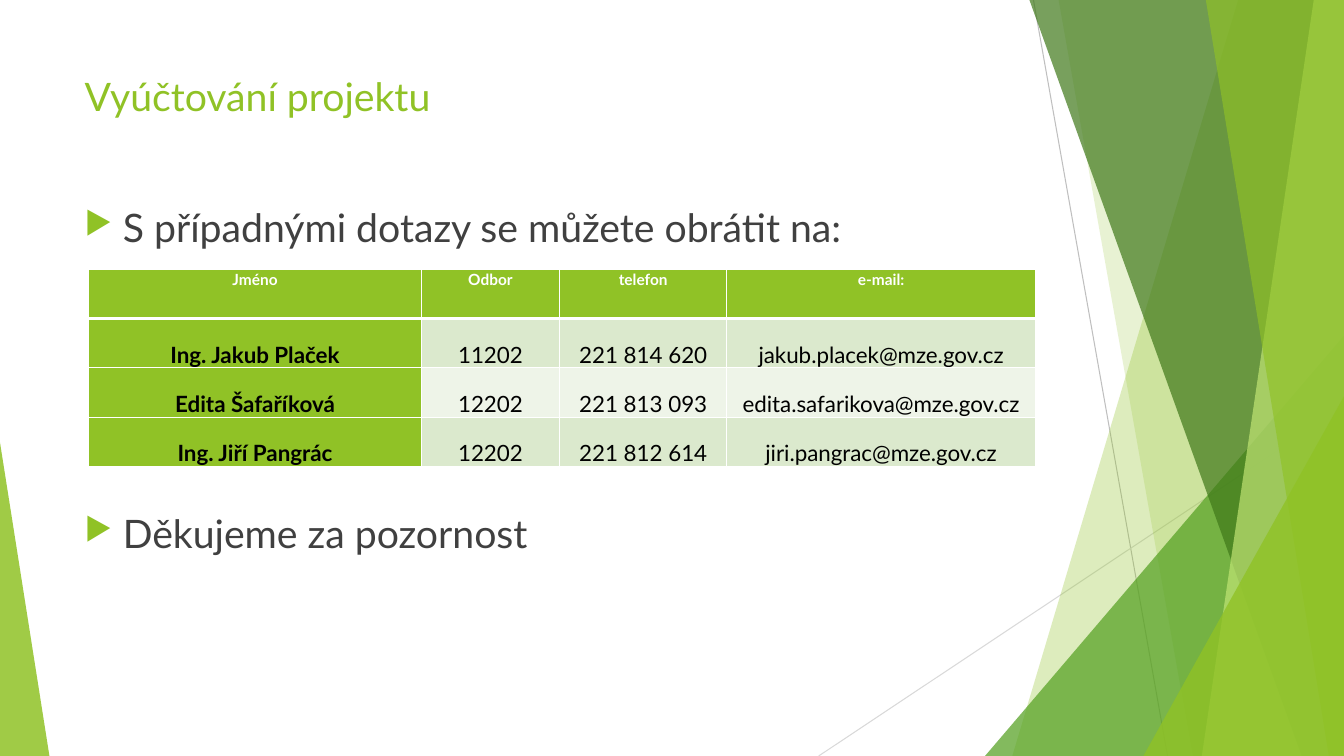
from lxml import etree
from pptx import Presentation
from pptx.dml.color import RGBColor
from pptx.enum.shapes import MSO_CONNECTOR, MSO_SHAPE
from pptx.enum.text import MSO_ANCHOR, PP_ALIGN
from pptx.oxml import parse_xml
from pptx.oxml.ns import nsdecls, qn
from pptx.util import Inches, Pt

STRAIGHT = MSO_CONNECTOR.STRAIGHT
TRIANGLE = MSO_SHAPE.ISOSCELES_TRIANGLE
TOP, BOTTOM = MSO_ANCHOR.TOP, MSO_ANCHOR.BOTTOM
CENTER = PP_ALIGN.CENTER

WIDTH, HEIGHT = 13.33, 7.5
MARGIN, CONTENT_WIDTH = 0.74, 9.4
FONT = "Lato"
GREEN, GRAY, WHITE, BLACK = "90C226", "404040", "FFFFFF", "000000"
BANDS = ("DBE9CD", "EEF4E8")

# Facets leaning on the right edge: distances from that edge at top and bottom
FACETS_BACK = [(1.05, 3.29, GREEN, 30), (2.83, 1.5, GREEN, 20)]
FACETS_FRONT = [(3.12, 0.42, "3F7819", 70), (0.3, 1.41, "C0E474", 70),
                (1.37, 0.15, GREEN, 65)]

CONTACTS = [
    ("Jméno", "Odbor", "telefon", "e-mail:"),
    ("Ing. Jakub Plaček", "11202", "221 814 620", "jakub.placek@mze.gov.cz"),
    ("Edita Šafaříková", "12202", "221 813 093", "edita.safarikova@mze.gov.cz"),
    ("Ing. Jiří Pangrác", "12202", "221 812 614", "jiri.pangrac@mze.gov.cz"),
]
COLUMN_WIDTHS = (3.3, 1.37, 1.66, 3.06)
ROW_HEIGHT = 0.49


def paint(color_format, color):
    color_format.rgb = RGBColor.from_string(color)


def fill_shape(shape, color, opacity):
    shape.shadow.inherit = False
    shape.fill.solid()
    paint(shape.fill.fore_color, color)
    shape.line.fill.background()
    srgb = shape.fill._xPr.find(".//" + qn("a:srgbClr"))
    etree.SubElement(srgb, qn("a:alpha")).set("val", str(opacity * 1000))


def add_hairline(slide, start, end, color):
    hairline = slide.shapes.add_connector(
        STRAIGHT, *(Inches(v) for v in (*start, *end)))
    paint(hairline.line.color, color)
    hairline.line.width = Pt(0.75)
    etree.SubElement(hairline._element.spPr, qn("a:effectLst"))


def add_facet(slide, right, bottom, top_reach, bottom_reach, color, opacity):
    corners = [(right - top_reach, 0), (right, 0), (right, bottom),
               (right - bottom_reach, bottom)]
    first, *rest = [(Inches(x), Inches(y)) for x, y in corners]
    builder = slide.shapes.build_freeform(*first, scale=1.0)
    builder.add_line_segments(rest, close=True)
    fill_shape(builder.convert_to_shape(), color, opacity)


def add_wedge(slide, left, bottom, width, height, apex, color, opacity):
    """Triangle on the bottom edge; apex is 0 at its left side, 1 at its right."""
    wedge = slide.shapes.add_shape(
        TRIANGLE, *(Inches(v) for v in (left, bottom - height, width, height)))
    wedge.adjustments[0] = apex
    fill_shape(wedge, color, opacity)


def add_backdrop(slide, width, height):
    add_hairline(slide, (width - 3.08, 0), (width - 1.75, height), "BFBFBF")
    add_hairline(slide, (width, 4.03), (width - 5.21, height), "D9D9D9")
    for facet in FACETS_BACK:
        add_facet(slide, width, height, *facet)
    add_wedge(slide, width - 3.56, height, 3.56, 4.17, 1, "54A021", 72)
    for facet in FACETS_FRONT:
        add_facet(slide, width, height, *facet)
    add_wedge(slide, width - 1.99, height, 1.99, 3.57, 1, GREEN, 80)
    add_wedge(slide, 0, height, 0.49, 3.11, 0, GREEN, 85)


def write(paragraph, text, size, color, bold=False):
    paragraph.text = text
    for name, value in dict(name=FONT, size=Pt(size), bold=bold).items():
        setattr(paragraph.font, name, value)
    paint(paragraph.font.color, color)


def add_text_frame(slide, box):
    frame = slide.shapes.add_textbox(*(Inches(v) for v in box)).text_frame
    frame.word_wrap = True
    frame.vertical_anchor = TOP
    return frame


def add_title(slide, box):
    frame = add_text_frame(slide, box)
    write(frame.paragraphs[0], "Vyúčtování projektu", 28, GREEN)


def add_bullet(paragraph):
    properties = paragraph._p.get_or_add_pPr()
    indent = Inches(0.38)
    properties.set("marL", str(indent))
    properties.set("indent", str(-indent))
    for bullet_part in (
            f'<a:buClr {nsdecls("a")}><a:srgbClr val="{GREEN}"/></a:buClr>',
            f'<a:buSzPct {nsdecls("a")} val="80000"/>',
            f'<a:buChar {nsdecls("a")} char="▶"/>'):
        properties.append(parse_xml(bullet_part))


def add_messages(slide, box):
    """Two bullets, with room for the contact table between them."""
    frame = add_text_frame(slide, box)
    question = frame.paragraphs[0]
    thanks = frame.add_paragraph()
    for paragraph, text in (
            (question, "S případnými dotazy se můžete obrátit na:"),
            (thanks, "Děkujeme za pozornost")):
        add_bullet(paragraph)
        write(paragraph, text, 28, GRAY)
    thanks.space_before = Pt(185)


def set_borders(cell, top, bottom):
    properties = cell._tc.get_or_add_tcPr()
    widths = {"lnL": 1, "lnR": 1, "lnT": top, "lnB": bottom}
    for position, (side, width) in enumerate(widths.items()):
        properties.insert(position, parse_xml(
            f'<a:{side} {nsdecls("a")} w="{Pt(width)}"><a:solidFill>'
            f'<a:srgbClr val="{WHITE}"/></a:solidFill></a:{side}>'))


def style_cell(cell, row, column, text):
    header = row == 0
    margins = dict(margin_left=Inches(0.07), margin_right=Inches(0.07),
                   margin_top=0, margin_bottom=0)
    for name, value in margins.items():
        setattr(cell, name, value)
    cell.vertical_anchor = TOP if header else BOTTOM
    cell.fill.solid()
    paint(cell.fill.fore_color,
          GREEN if header or column == 0 else BANDS[(row - 1) % 2])
    set_borders(cell, 3 if row == 1 else 1, 3 if header else 1)
    paragraph = cell.text_frame.paragraphs[0]
    paragraph.alignment = CENTER
    paragraph.line_spacing = 1.07
    write(paragraph, text, 11 if header else 16,
          WHITE if header else BLACK, header or column == 0)


def add_contacts(slide, left, top):
    table = slide.shapes.add_table(
        len(CONTACTS), len(COLUMN_WIDTHS), Inches(left), Inches(top),
        Inches(sum(COLUMN_WIDTHS)), Inches(ROW_HEIGHT * len(CONTACTS))).table
    for column, width in zip(table.columns, COLUMN_WIDTHS):
        column.width = Inches(width)
    for r, contact in enumerate(CONTACTS):
        table.rows[r].height = Inches(ROW_HEIGHT)
        for c, text in enumerate(contact):
            style_cell(table.cell(r, c), r, c, text)


def main():
    deck = Presentation()
    deck.slide_width, deck.slide_height = Inches(WIDTH), Inches(HEIGHT)
    slide = deck.slides.add_slide(deck.slide_layouts[6])
    add_backdrop(slide, WIDTH, HEIGHT)
    add_title(slide, (MARGIN, 0.67, CONTENT_WIDTH, 1.44))
    add_messages(slide, (MARGIN, 1.97, CONTENT_WIDTH, 4.64))
    add_contacts(slide, 0.88, 2.67)
    deck.save("out.pptx")


if __name__ == "__main__":
    main()
